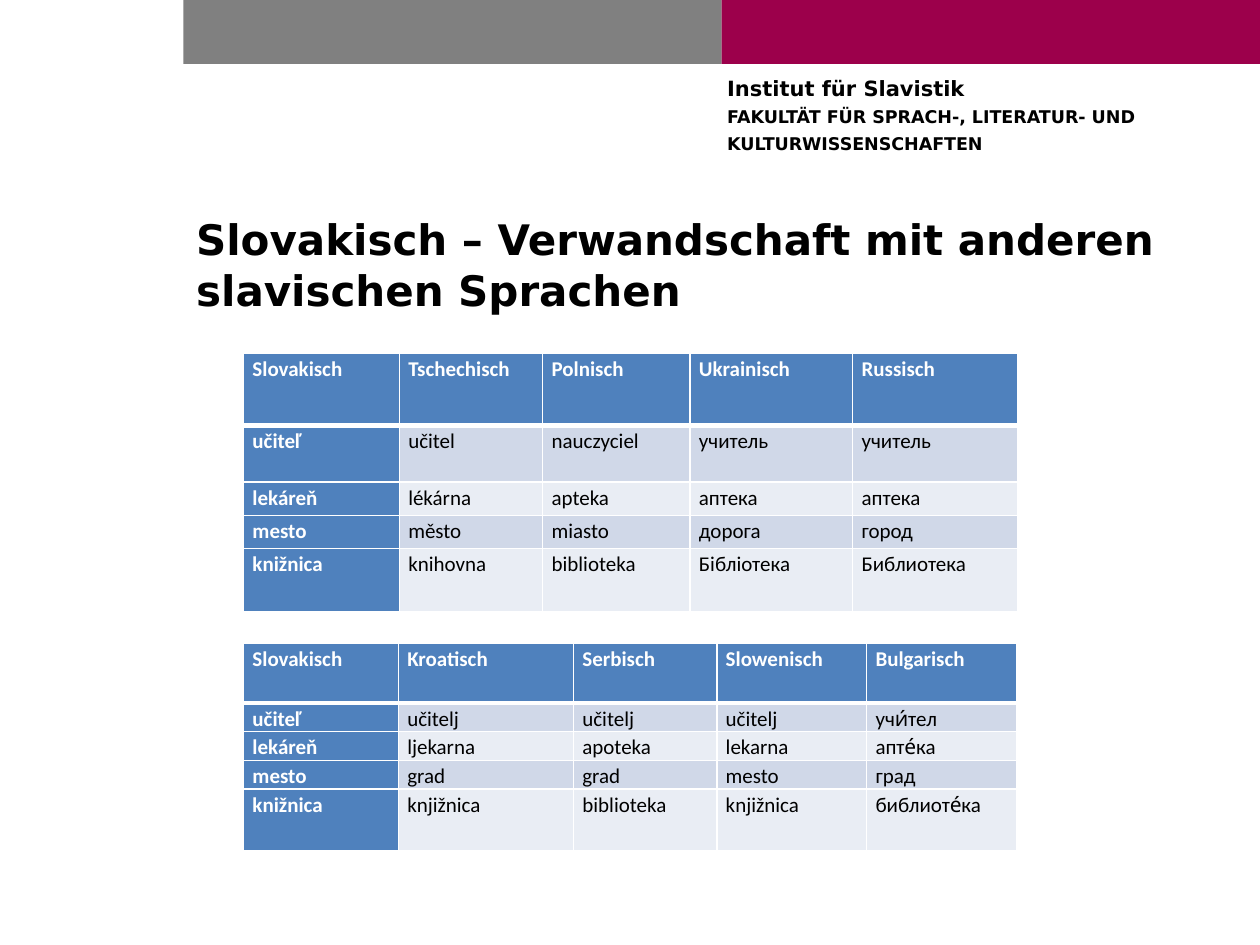
from itertools import product

from pptx import Presentation
from pptx.dml.color import RGBColor
from pptx.enum import shapes, text
from pptx.oxml import parse_xml
from pptx.oxml.ns import nsdecls
from pptx.util import Cm, Pt

WHITE, BLACK, BLUE = "FFFFFF", "000000", "4F81BD"
BANDS = ["D0D8E8", "E9EDF4"]

EAST = [
    ["Slovakisch", "Tschechisch", "Polnisch", "Ukrainisch", "Russisch"],
    ["učiteľ", "učitel", "nauczyciel", "учитель", "учитель"],
    ["lekáreň", "lékárna", "apteka", "аптека", "аптека"],
    ["mesto", "město", "miasto", "дорога", "город"],
    ["knižnica", "knihovna", "biblioteka", "Бібліотека", "Библиотека"],
]
SOUTH = [
    ["Slovakisch", "Kroatisch", "Serbisch", "Slowenisch", "Bulgarisch"],
    ["učiteľ", "učitelj", "učitelj", "učitelj", "учи́тел"],
    ["lekáreň", "ljekarna", "apoteka", "lekarna", "апте́ка"],
    ["mesto", "grad", "grad", "mesto", "град"],
    ["knižnica", "knjižnica", "biblioteka", "knjižnica", "библиоте́ка"],
]


def rgb(code):
    return RGBColor.from_string(code)


def style(para, name, size, color=BLACK, bold=True):
    font = para.font
    font.name, font.size, font.bold = name, Pt(size), bold
    font.color.rgb = rgb(color)


def add_bar(slide, left, color):
    bar = slide.shapes.add_shape(
        shapes.MSO_SHAPE.RECTANGLE, Cm(left), 0, Cm(10.85), Cm(1.29))
    bar.shadow.inherit = False
    bar.fill.solid()
    bar.fill.fore_color.rgb = rgb(color)
    bar.line.fill.background()


def add_head(slide, lines):
    box = slide.shapes.add_textbox(Cm(14.66), Cm(1.53), Cm(10.26), Cm(2.4))
    frame = box.text_frame
    frame.word_wrap = True
    frame.margin_left = frame.margin_right = 0
    frame.margin_top = frame.margin_bottom = 0
    frame.text = "\n".join(lines)
    for row, para in enumerate(frame.paragraphs):
        para.space_after = Pt(3)
        style(para, "DejaVu Sans", 10 if row else 12)


def set_title(slide, words):
    title = slide.shapes.title
    title.left, title.top = Cm(3.7), Cm(4.18)
    title.width, title.height = Cm(19.96), Cm(1.94)
    frame = title.text_frame
    frame.text = words
    frame.word_wrap = True
    frame.auto_size = text.MSO_AUTO_SIZE.NONE
    frame.vertical_anchor = text.MSO_ANCHOR.TOP
    para = frame.paragraphs[0]
    para.alignment = text.PP_ALIGN.LEFT
    style(para, "DejaVu Sans", 24)


def add_edges(cell, low):
    """Draw white borders, 1 pt wide except for the lower one."""
    props = cell._tc.get_or_add_tcPr()
    for side, width in zip("LRTB", (1, 1, 1, low)):
        props.append(parse_xml(
            f'<a:ln{side} {nsdecls("a")} w="{Pt(width)}"><a:solidFill>'
            f'<a:srgbClr val="{WHITE}"/></a:solidFill></a:ln{side}>'))


def fill_cell(cell, word, row, col):
    label = row == 0 or col == 0
    cell.margin_left = cell.margin_right = Cm(0.18)
    cell.margin_top, cell.margin_bottom = Cm(0.03), 0
    cell.text = word
    para = cell.text_frame.paragraphs[0]
    para.line_spacing = 1.07
    style(para, "Calibri", 12, WHITE if label else BLACK, label)
    add_edges(cell, 1 if row else 3)
    cell.fill.solid()
    cell.fill.fore_color.rgb = rgb(BLUE if label else BANDS[(row - 1) % 2])


def add_grid(slide, top, words, widths, heights):
    table = slide.shapes.add_table(
        len(heights), len(widths), Cm(4.91), Cm(top),
        Cm(sum(widths)), Cm(sum(heights))).table
    for col, width in zip(table.columns, widths):
        col.width = Cm(width)
    for row, height in zip(table.rows, heights):
        row.height = Cm(height)
    for row, col in product(range(len(heights)), range(len(widths))):
        fill_cell(table.cell(row, col), words[row][col], row, col)


def main():
    deck = Presentation()
    deck.slide_width, deck.slide_height = Cm(25.4), Cm(19.05)
    slide = deck.slides.add_slide(deck.slide_layouts[5])
    add_bar(slide, 3.7, "808080")
    add_bar(slide, 14.55, "9C004B")
    add_head(slide, ["Institut für Slavistik",
                     "FAKULTÄT FÜR SPRACH-, LITERATUR- UND",
                     "KULTURWISSENSCHAFTEN"])
    set_title(slide, "Slovakisch – Verwandschaft mit anderen slavischen Sprachen")
    add_grid(slide, 7.13, EAST, [3.14, 2.89, 2.97, 3.28, 3.32],
             [1.45, 1.14, 0.67, 0.67, 1.27])
    add_grid(slide, 12.96, SOUTH, [3.12, 3.53, 2.89, 3.02, 3.02],
             [1.21, 0.58, 0.58, 0.58, 1.24])
    deck.save("out.pptx")


if __name__ == "__main__":
    main()
